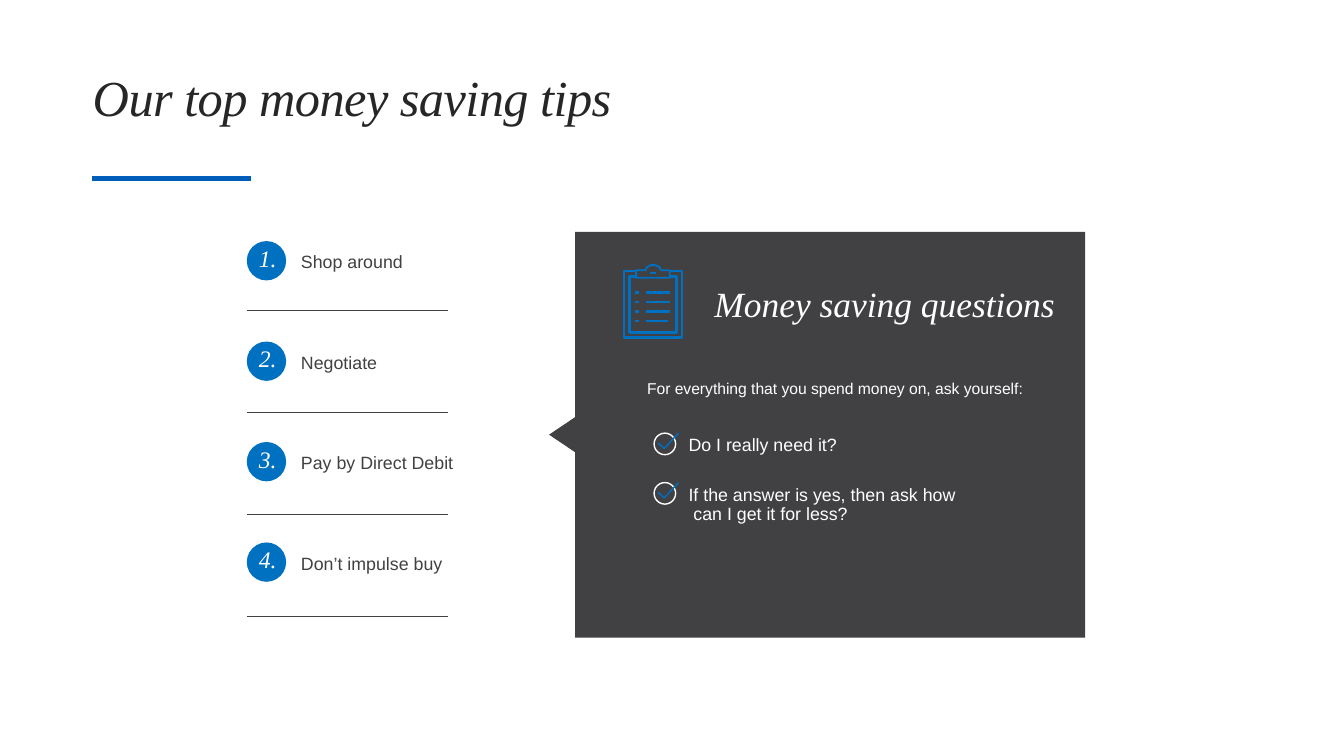
from dataclasses import dataclass

from lxml import etree
from pptx import Presentation
from pptx import util as u
from pptx.dml.color import RGBColor
from pptx.enum import shapes, text
from pptx.oxml import ns


@dataclass(frozen=True)
class Theme:
    rule: str = "005EB8"
    blue: str = "0070C0"
    dark: str = "414042"
    ink: str = "262626"
    white: str = "FFFFFF"
    serif: str = "Times New Roman"
    sans: str = "Arial"
    title: float = 36
    heading: float = 25.3
    number: float = 16.9
    body: float = 12.7
    intro: float = 11.2


THEME = Theme()
TIPS = ["Shop around", "Negotiate", "Pay by Direct Debit", "Don’t impulse buy"]
INTRO = "For everything that you spend money on, ask yourself:"
QUESTIONS = ["Do I really need it?", "If the answer is yes, then ask how\vcan I get it for less?"]


def style(paragraph, size, color, font, spacing=0):
    for run in paragraph.runs:
        run.font.size = u.Pt(size)
        run.font.name = font
        run.font.italic = font == THEME.serif
        run.font.color.rgb = RGBColor.from_string(color)
        if spacing:
            run.font._element.set("spc", str(round(spacing * 100)))


def add_frame(slide, left, top, width, height):
    frame = slide.shapes.add_textbox(u.Pt(left), u.Pt(top), u.Pt(width), u.Pt(height)).text_frame
    frame.margin_left = frame.margin_right = frame.margin_top = frame.margin_bottom = 0
    frame.word_wrap = True
    return frame


def add_label(slide, box, wording, size, color, font, spacing=0):
    frame = add_frame(slide, *box)
    frame.text = wording
    style(frame.paragraphs[0], size, color, font, spacing)
    return frame


def paint(shape, fill=None, line=None, width=1):
    shape.shadow.inherit = False
    if fill:
        shape.fill.solid()
        shape.fill.fore_color.rgb = RGBColor.from_string(fill)
    else:
        shape.fill.background()
    if line:
        shape.line.color.rgb = RGBColor.from_string(line)
        shape.line.width = u.Pt(width)
    else:
        shape.line.fill.background()


def add_circle(slide, left, top, size, **colors):
    circle = slide.shapes.add_shape(
        shapes.MSO_SHAPE.OVAL, u.Pt(left), u.Pt(top), u.Pt(size), u.Pt(size))
    paint(circle, **colors)


def add_outline(slide, points, closed=False, **colors):
    corners = [(u.Pt(x), u.Pt(y)) for x, y in points]
    builder = slide.shapes.build_freeform(*corners[0], scale=1.0)
    builder.add_line_segments(corners[1:], close=closed)
    paint(builder.convert_to_shape(), **colors)


def add_rule(slide, left, right, y, color, width):
    rule = slide.shapes.add_connector(
        shapes.MSO_CONNECTOR.STRAIGHT, u.Pt(left), u.Pt(y), u.Pt(right), u.Pt(y))
    rule.line.color.rgb = RGBColor.from_string(color)
    rule.line.width = u.Pt(width)
    etree.SubElement(rule._element.spPr, ns.qn("a:effectLst"))


def add_title(slide):
    frame = add_label(slide, (66.24, 19.4, 820, 104.4), "Our top money saving tips",
                      THEME.title, THEME.ink, THEME.serif, -0.4)
    frame.vertical_anchor = text.MSO_ANCHOR.MIDDLE
    frame.paragraphs[0].line_spacing = 0.9
    add_rule(slide, 66, 179.3, 127.5, THEME.rule, 4)


def add_tip(slide, index, tip):
    top = 172.2 + 71.76 * index
    add_circle(slide, 176.3, top, 28.1, fill=THEME.blue)
    add_label(slide, (185, top + 1.9, 18, 20), f"{index + 1}.",
              THEME.number, THEME.white, THEME.serif, -0.2)
    add_label(slide, (215, top + 7.1, 125, 15), tip, THEME.body, THEME.dark, THEME.sans)
    add_rule(slide, 176.4, 319.7, 221.6 + 72.95 * index, THEME.dark, 1)


def add_clipboard(slide):
    ink = {"line": THEME.blue, "width": 1.7}
    for left, top, right, bottom in [(445.7, 193.7, 487, 241.2), (449.8, 197.5, 483.3, 237.4)]:
        add_outline(slide, [(454.3, top), (left, top), (left, bottom),
                            (right, bottom), (right, top), (478.3, top)], **ink)
    clip = [(454.4, 193), (461, 193), (462.4, 190.6), (465, 189.4), (468.2, 189.4),
            (470.8, 190.6), (472.2, 193), (478.4, 193), (478.4, 198.4), (454.4, 198.4)]
    add_outline(slide, clip, closed=True, line=THEME.blue, width=1.3)
    add_rule(slide, 464.4, 468.7, 195.1, THEME.blue, 1.7)
    for row, end in enumerate([478.8, 478.8, 478.8, 477.4]):
        y = 208.9 + 6.75 * row
        add_rule(slide, 453.6, 456.5, y, THEME.blue, 1.7)
        add_rule(slide, 461.5, end, y, THEME.blue, 1.7)


def add_check(slide, top):
    add_circle(slide, 467.2, top, 15.4, line=THEME.white)
    add_outline(slide, [(484.6, top), (474.5, top + 11), (470, top + 7)], line=THEME.blue)


def add_questions(slide):
    frame = add_label(slide, (462.2, 270.7, 290, 104), INTRO,
                      THEME.intro, THEME.white, THEME.sans)
    for question, gap in zip(QUESTIONS, [26, 22]):
        paragraph = frame.add_paragraph()
        paragraph.text = question
        paragraph.space_before = u.Pt(gap)
        properties = paragraph._p.get_or_add_pPr()
        properties.set("marL", str(u.Pt(33.1)))
        properties.set("indent", str(-u.Pt(3.5)))
        style(paragraph, THEME.body, THEME.white, THEME.sans)
    paragraph.line_spacing = u.Pt(13.4)
    for index in range(len(QUESTIONS)):
        add_check(slide, 309.4 + 35.3 * index)


def add_panel(slide):
    left, top, right, bottom = 410.8, 165.7, 775.1, 455.5
    add_outline(slide, [(right, top), (left, top), (left, 298), (392.2, 310.5), (left, 323),
                        (left, bottom), (right, bottom)], closed=True, fill=THEME.dark)
    add_label(slide, (510.3, 201.8, 260, 31), "Money saving questions",
              THEME.heading, THEME.white, THEME.serif)
    add_clipboard(slide)
    add_questions(slide)


def main():
    deck = Presentation()
    deck.slide_width, deck.slide_height = u.Pt(960), u.Pt(540)
    slide = deck.slides.add_slide(deck.slide_layouts[6])
    add_title(slide)
    for index, tip in enumerate(TIPS):
        add_tip(slide, index, tip)
    add_panel(slide)
    deck.save("out.pptx")


if __name__ == "__main__":
    main()
